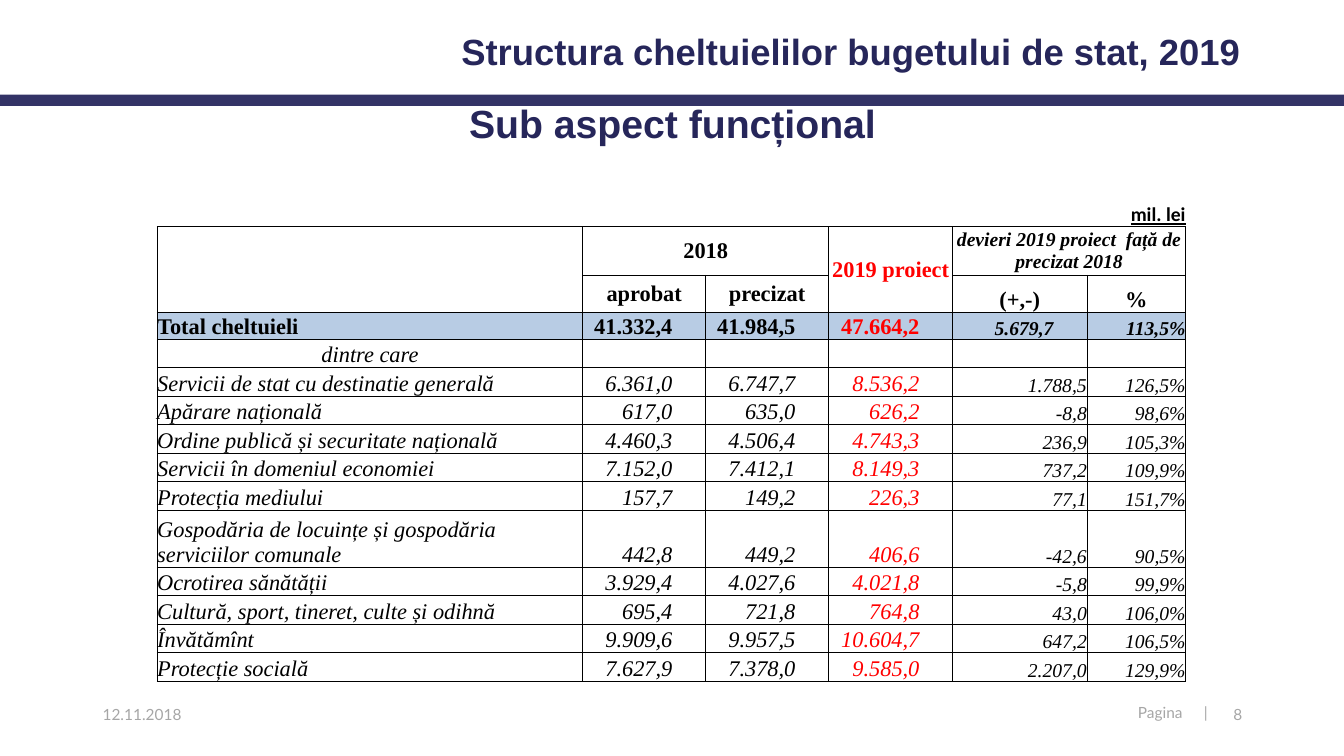
from dataclasses import dataclass

from lxml import etree
from pptx import Presentation
from pptx.dml.color import RGBColor
from pptx.enum.shapes import MSO_SHAPE
from pptx.enum.text import MSO_ANCHOR, PP_ALIGN
from pptx.oxml.ns import qn
from pptx.util import Inches, Pt

LEFT, CENTER, RIGHT = PP_ALIGN.LEFT, PP_ALIGN.CENTER, PP_ALIGN.RIGHT
TOP, MIDDLE, BOTTOM = MSO_ANCHOR.TOP, MSO_ANCHOR.MIDDLE, MSO_ANCHOR.BOTTOM
RECTANGLE = MSO_SHAPE.RECTANGLE


@dataclass(frozen=True)
class Theme:
    heading_font: str = "Arial"
    footer_font: str = "Lato"
    unit_font: str = "Calibri"
    table_font: str = "Times New Roman"
    heading: str = "26265A"
    bar: str = "333366"
    footer: str = "A6A6A6"
    ink: str = "000000"
    project: str = "FF0000"
    total: str = "B8CCE4"
    title_size: int = 28
    topic_size: int = 26
    figure_size: int = 16
    deviation_size: int = 14
    footer_size: int = 11
    border: float = 0.5


class BudgetSlide:
    GRID_COLUMNS = 100
    GRID_ROWS = 100

    def __init__(self, deck, theme):
        self.theme = theme
        self.slide = deck.slides.add_slide(deck.slide_layouts[6])
        self.column = deck.slide_width / self.GRID_COLUMNS
        self.row = deck.slide_height / self.GRID_ROWS

    def place(self, left, top, width, height):
        return (round(left * self.column), round(top * self.row),
                round(width * self.column), round(height * self.row))

    def style(self, paragraph, font, size, color, align=LEFT, bold=False,
              italic=False, underline=False):
        paragraph.alignment = align
        paragraph.font.name = font
        paragraph.font.size = Pt(size)
        paragraph.font.bold = bold
        paragraph.font.italic = italic
        paragraph.font.underline = underline
        paragraph.font.color.rgb = RGBColor.from_string(color)

    def bar(self, *area):
        band = self.slide.shapes.add_shape(RECTANGLE, *self.place(*area))
        band.shadow.inherit = False
        band.fill.solid()
        band.fill.fore_color.rgb = RGBColor.from_string(self.theme.bar)
        band.line.fill.background()

    def text(self, wording, area, font, size, color, spacing=1.0, tab=None,
             indent=None, **look):
        frame = self.slide.shapes.add_textbox(*self.place(*area)).text_frame
        frame.word_wrap = True
        frame.vertical_anchor = TOP
        if indent is not None:
            frame.margin_left = round(indent * self.column)
        paragraph = frame.paragraphs[0]
        paragraph.text = wording
        paragraph.line_spacing = spacing
        if tab is not None:
            stops = etree.SubElement(paragraph._p.get_or_add_pPr(), qn("a:tabLst"))
            etree.SubElement(stops, qn("a:tab"), pos=str(round(tab * self.column)),
                             algn="l")
        self.style(paragraph, font, size, color, **look)

    def footer(self, wording, area, **look):
        theme = self.theme
        self.text(wording, area, theme.footer_font, theme.footer_size,
                  theme.footer, **look)

    def table(self, left, top, widths, heights):
        area = self.place(left, top, sum(widths), sum(heights))
        grid = self.slide.shapes.add_table(len(heights), len(widths), *area).table
        grid.first_row = grid.horz_banding = False
        for column, width in zip(grid.columns, widths):
            column.width = round(width * self.column)
        for row, height in zip(grid.rows, heights):
            row.height = round(height * self.row)
        for index, row in enumerate(grid.rows):
            for cell in row.cells:
                self.borders(cell, ("B",) if index == 0 else ("L", "R", "T", "B"))
                cell.fill.background()
                cell.margin_left = cell.margin_right = 0
                cell.margin_top = cell.margin_bottom = 0
                end = cell.text_frame.paragraphs[0]._p.get_or_add_endParaRPr()
                end.set("sz", str(self.theme.deviation_size * 100))
        return grid

    def borders(self, cell, drawn):
        properties = cell._tc.get_or_add_tcPr()
        for side in ("L", "R", "T", "B"):
            line = etree.SubElement(properties, qn(f"a:ln{side}"),
                                    w=str(Pt(self.theme.border)))
            if side in drawn:
                fill = etree.SubElement(line, qn("a:solidFill"))
                etree.SubElement(fill, qn("a:srgbClr"), val=self.theme.ink)
            else:
                etree.SubElement(line, qn("a:noFill"))

    def cell(self, cell, wording, size, anchor=BOTTOM, color=None, font=None,
             margin=0, fill=None, **look):
        cell.vertical_anchor = anchor
        cell.margin_right = round(margin * self.column)
        if fill:
            cell.fill.solid()
            cell.fill.fore_color.rgb = RGBColor.from_string(fill)
        paragraph = cell.text_frame.paragraphs[0]
        paragraph.text = wording
        self.style(paragraph, font or self.theme.table_font, size,
                   color or self.theme.ink, **look)


COLUMN_WIDTHS = [31.66, 9.15, 9.15, 9.23, 9.98, 7.35]
ROW = 3.77
ROW_HEIGHTS = [3.33, 6.4, 4.89, 3.6] + [ROW] * 6 + [2 * ROW] + [ROW] * 4
FIGURE_MARGIN = 2.48
TOTAL_ROW, AMONG_ROW = 3, 4
PROJECT_COLUMN, FIRST_DEVIATION = 3, 4

EXPENSES = [
    ("Total cheltuieli", "41.332,4", "41.984,5", "47.664,2", "5.679,7", "113,5%"),
    ("dintre care",),
    ("Servicii de stat cu destinatie generală",
     "6.361,0", "6.747,7", "8.536,2", "1.788,5", "126,5%"),
    ("Apărare națională", "617,0", "635,0", "626,2", "-8,8", "98,6%"),
    ("Ordine publică și securitate națională",
     "4.460,3", "4.506,4", "4.743,3", "236,9", "105,3%"),
    ("Servicii în domeniul economiei",
     "7.152,0", "7.412,1", "8.149,3", "737,2", "109,9%"),
    ("Protecția mediului", "157,7", "149,2", "226,3", "77,1", "151,7%"),
    ("Gospodăria de locuințe și gospodăria serviciilor comunale",
     "442,8", "449,2", "406,6", "-42,6", "90,5%"),
    ("Ocrotirea sănătății", "3.929,4", "4.027,6", "4.021,8", "-5,8", "99,9%"),
    ("Cultură, sport, tineret, culte și odihnă",
     "695,4", "721,8", "764,8", "43,0", "106,0%"),
    ("Învătămînt", "9.909,6", "9.957,5", "10.604,7", "647,2", "106,5%"),
    ("Protecție socială", "7.627,9", "7.378,0", "9.585,0", "2.207,0", "129,9%"),
]


def add_headers(page, grid, theme):
    for first, last in (((1, 0), (2, 0)), ((1, 1), (1, 2)),
                        ((1, 3), (2, 3)), ((1, 4), (1, 5))):
        grid.cell(*first).merge(grid.cell(*last))
    page.cell(grid.cell(0, 5), "mil. lei", theme.deviation_size,
              font=theme.unit_font, align=RIGHT, bold=True, underline=True)
    page.cell(grid.cell(1, 4), "devieri 2019 proiect  față de precizat 2018",
              theme.deviation_size, MIDDLE, align=CENTER, bold=True, italic=True)
    for row, column, wording, anchor, color in (
            (1, 1, "2018", MIDDLE, theme.ink),
            (1, 3, "2019 proiect", MIDDLE, theme.project),
            (2, 1, "aprobat", MIDDLE, theme.ink),
            (2, 2, "precizat", MIDDLE, theme.ink),
            (2, 4, "(+,-)", BOTTOM, theme.ink),
            (2, 5, "%", BOTTOM, theme.ink)):
        page.cell(grid.cell(row, column), wording, theme.figure_size, anchor,
                  color, align=CENTER, bold=True)


def add_expenses(page, grid, theme):
    for row, expense in enumerate(EXPENSES, TOTAL_ROW):
        total = row == TOTAL_ROW
        for column, wording in enumerate(expense):
            deviation = column >= FIRST_DEVIATION
            padded = 0 < column < FIRST_DEVIATION or (
                total and column == FIRST_DEVIATION)
            label_align = CENTER if row == AMONG_ROW else LEFT
            page.cell(grid.cell(row, column), wording,
                      theme.deviation_size if deviation else theme.figure_size,
                      color=theme.project if column == PROJECT_COLUMN else theme.ink,
                      margin=FIGURE_MARGIN if padded else 0,
                      fill=theme.total if total else None,
                      align=RIGHT if column else label_align,
                      bold=total, italic=deviation or not total)


def main():
    theme = Theme()
    deck = Presentation()
    deck.slide_width, deck.slide_height = Inches(13.33), Inches(7.5)
    page = BudgetSlide(deck, theme)
    page.bar(0, 12.53, 100, 1.47)
    page.footer("Pagina\t|", (83.57, 92.67, 7.43, 3.87), spacing=0.9,
                indent=1.1, tab=4.9)
    page.text("Sub aspect funcțional", (6.9, 13.2, 86.27, 12.4),
              theme.heading_font, theme.title_size, theme.heading,
              spacing=0.9, align=CENTER, bold=True)
    page.text("Structura cheltuielilor bugetului de stat, 2019",
              (30.53, 3.87, 62.57, 6.8), theme.heading_font, theme.topic_size,
              theme.heading, spacing=0.9, align=RIGHT, bold=True)
    page.footer("12.11.2018", (6.9, 92.67, 22.5, 5.33))
    page.footer("8", (90.1, 92.67, 3.08, 5.33), align=RIGHT)
    grid = page.table(11.7, 26.67, COLUMN_WIDTHS, ROW_HEIGHTS)
    add_headers(page, grid, theme)
    add_expenses(page, grid, theme)
    deck.save("out.pptx")


if __name__ == "__main__":
    main()
